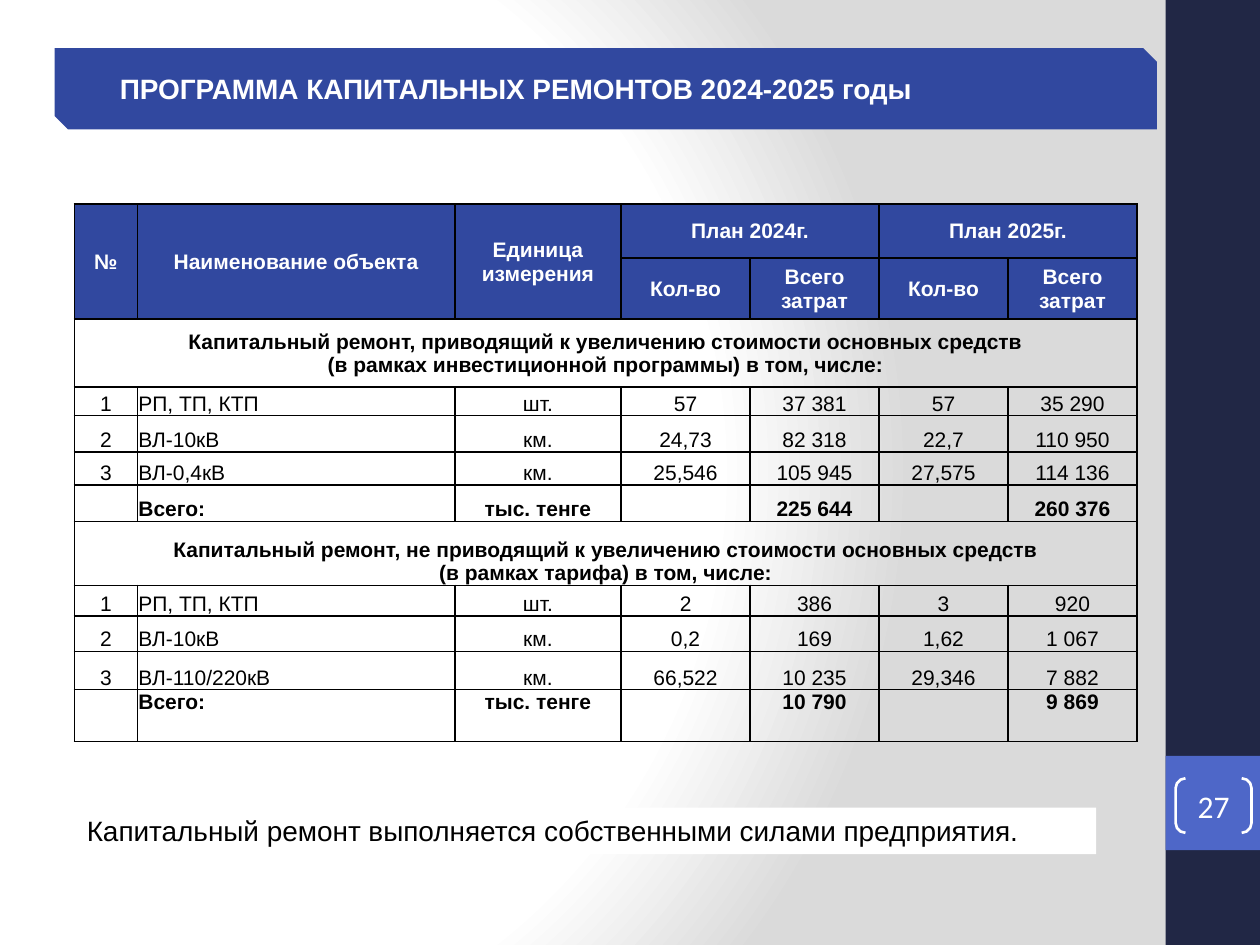
from collections import namedtuple

from lxml import etree
from pptx import Presentation
from pptx import oxml
from pptx import util as u
from pptx.dml import color
from pptx.enum import shapes, text
from pptx.oxml import ns

Box = namedtuple("Box", "left top width height")

COLORS = {"navy": "212745", "blue": "31489F", "badge": "4E67C8",
          "white": "FFFFFF", "grey": "DADADA", "black": "000000"}
MIDDLE, BOTTOM, TOP = (text.MSO_ANCHOR.MIDDLE, text.MSO_ANCHOR.BOTTOM,
                       text.MSO_ANCHOR.TOP)
LEFT, CENTER = text.PP_ALIGN.LEFT, text.PP_ALIGN.CENTER

COLUMNS = [1.27, 6.4, 3.35] + [2.6] * 4
ROWS = [1.09, 1.23, 1.37, 0.58, 0.73, 0.67, 0.73, 1.29, 0.62, 0.71, 0.77, 1.05]
HEADER = [
    ["№", "Наименование объекта", "Единица измерения", "План 2024г.", "", "План 2025г.", ""],
    ["", "", ""] + ["Кол-во", "Всего затрат"] * 2,
]
SECTIONS = [
    ("Капитальный ремонт, приводящий к увеличению стоимости основных средств\n"
     "(в рамках инвестиционной программы) в том, числе:", MIDDLE, BOTTOM, [
         ["1", "РП, ТП, КТП", "шт.", "57", "37 381", "57", "35 290"],
         ["2", "ВЛ-10кВ", "км.", "24,73", "82 318", "22,7", "110 950"],
         ["3", "ВЛ-0,4кВ", "км.", "25,546", "105 945", "27,575", "114 136"],
         ["", "Всего:", "тыс. тенге", "", "225 644", "", "260 376"]]),
    ("Капитальный ремонт, не приводящий к увеличению стоимости основных средств\n"
     "(в рамках тарифа) в том, числе:", BOTTOM, TOP, [
         ["1", "РП, ТП, КТП", "шт.", "2", "386", "3", "920"],
         ["2", "ВЛ-10кВ", "км.", "0,2", "169", "1,62", "1 067"],
         ["3", "ВЛ-110/220кВ", "км.", "66,522", "10 235", "29,346", "7 882"],
         ["", "Всего:", "тыс. тенге", "", "10 790", "", "9 869"]]),
]


def rgb(name):
    return color.RGBColor.from_string(COLORS[name])


def lengths(box):
    return [u.Cm(value) for value in box]


def add_block(page, kind, box, fill=None):
    block = page.shapes.add_shape(kind, *lengths(box))
    block.shadow.inherit = False
    block.line.fill.background()
    if fill:
        block.fill.solid()
        block.fill.fore_color.rgb = rgb(fill)
    else:
        block.fill.background()
    return block


def write(frame, words, size, ink, bold=False, align=LEFT, font="Arial"):
    frame.text = words
    for para in frame.paragraphs:
        para.alignment = align
        for span in para.runs:
            span.font.name = font
            span.font.size = u.Pt(size)
            span.font.bold = bold
            span.font.color.rgb = rgb(ink)
        if not para.runs:
            # An empty paragraph takes its line height from its end mark.
            end = etree.SubElement(para._p, ns.qn("a:endParaRPr"))
            end.set("sz", str(size * 100))


def set_margins(holder, left, top, right, bottom):
    holder.margin_left, holder.margin_top = u.Cm(left), u.Cm(top)
    holder.margin_right, holder.margin_bottom = u.Cm(right), u.Cm(bottom)


def paint_background(page):
    page.background.fill.gradient()
    old = page.element.find(".//" + ns.qn("a:gradFill"))
    stops = "".join(
        f'<a:gs pos="{pos}"><a:srgbClr val="{COLORS[name]}"/></a:gs>'
        for pos, name in [(0, "white"), (75000, "white"), (100000, "grey")])
    old.getparent().replace(old, oxml.parse_xml(
        f'<a:gradFill {ns.nsdecls("a")} rotWithShape="1"><a:gsLst>{stops}</a:gsLst>'
        '<a:path path="circle"><a:fillToRect l="20000" t="50000" r="100000" b="50000"/>'
        '</a:path></a:gradFill>'))


def add_sidebar(page, box, number):
    add_block(page, shapes.MSO_SHAPE.RECTANGLE, box, "navy")
    badge = Box(box.left, box.top + 15.24, box.width, box.width)
    add_block(page, shapes.MSO_SHAPE.RECTANGLE, badge, "badge")
    bracket = add_block(page, shapes.MSO_SHAPE.DOUBLE_BRACKET,
                        Box(badge.left + 0.2, badge.top + 0.45, 1.53, 1.1))
    bracket.adjustments[0] = 0.18
    bracket.line.color.rgb = rgb("white")
    bracket.line.width = u.Pt(1.5)
    frame = bracket.text_frame
    set_margins(frame, 0, 0, 0, 0)
    frame.vertical_anchor = MIDDLE
    write(frame, number, 18, "white", align=CENTER, font="Calibri")


def add_title(page, box, words):
    banner = add_block(page, shapes.MSO_SHAPE.SNIP_2_DIAG_RECTANGLE, box, "blue")
    frame = banner.text_frame
    set_margins(frame, 0.18, 0.1, 0.18, 0.1)
    frame.vertical_anchor = MIDDLE
    write(frame, words, 16, "white", bold=True)
    frame.paragraphs[0]._p.get_or_add_pPr().set("marL", str(u.Cm(1)))


def add_note(page, box, words):
    note = page.shapes.add_textbox(*lengths(box))
    note.fill.solid()
    note.fill.fore_color.rgb = rgb("white")
    note.text_frame.word_wrap = True
    write(note.text_frame, words, 16, "black")


def style_cell(cell, words, anchor, bold=False, align=CENTER, header=False):
    properties = cell._tc.get_or_add_tcPr()
    for side in "LRTB":
        properties.append(oxml.parse_xml(
            f'<a:ln{side} {ns.nsdecls("a")} w="12700"><a:solidFill>'
            f'<a:srgbClr val="{COLORS["black"]}"/></a:solidFill></a:ln{side}>'))
    if header:
        cell.fill.solid()
        cell.fill.fore_color.rgb = rgb("blue")
    else:
        cell.fill.background()
    set_margins(cell, 0.02, 0.02, 0.02, 0)
    cell.vertical_anchor = anchor
    write(cell.text_frame, words, 12, "white" if header else "black", bold, align)


def add_repair_table(page, box):
    table = page.shapes.add_table(len(ROWS), len(COLUMNS), *lengths(box)).table
    table.first_row = table.horz_banding = False
    for column, width in zip(table.columns, COLUMNS):
        column.width = u.Cm(width)
    for row, height in zip(table.rows, ROWS):
        row.height = u.Cm(height)

    for row, labels in enumerate(HEADER):
        for column, words in enumerate(labels):
            style_cell(table.cell(row, column), words, MIDDLE, bold=True, header=True)
    for column in range(3):
        table.cell(0, column).merge(table.cell(1, column))
    for column in (3, 5):
        table.cell(0, column).merge(table.cell(0, column + 1))

    row = len(HEADER)
    last = len(COLUMNS) - 1
    for heading, heading_anchor, total_anchor, records in SECTIONS:
        for column in range(len(COLUMNS)):
            style_cell(table.cell(row, column), "" if column else heading,
                       heading_anchor, bold=True)
        table.cell(row, 0).merge(table.cell(row, last))
        for row, record in enumerate(records, row + 1):
            total = record is records[-1]
            for column, words in enumerate(record):
                style_cell(table.cell(row, column), words,
                           total_anchor if total else BOTTOM, bold=total,
                           align=LEFT if column == 1 else CENTER)
        row += 1


def main():
    deck = Presentation()
    deck.slide_width, deck.slide_height = u.Cm(25.4), u.Cm(19.05)
    page = deck.slides.add_slide(deck.slide_layouts[6])
    paint_background(page)
    add_sidebar(page, Box(23.5, 0, 1.9, 19.05), "27")
    add_title(page, Box(1.1, 0.97, 22.22, 1.64),
              "ПРОГРАММА КАПИТАЛЬНЫХ РЕМОНТОВ 2024-2025 годы")
    add_note(page, Box(1.5, 16.28, 20.6, 0.94),
             "Капитальный ремонт выполняется собственными силами предприятия.")
    add_repair_table(page, Box(1.5, 4.11, sum(COLUMNS), sum(ROWS)))
    deck.save("out.pptx")


if __name__ == "__main__":
    main()
